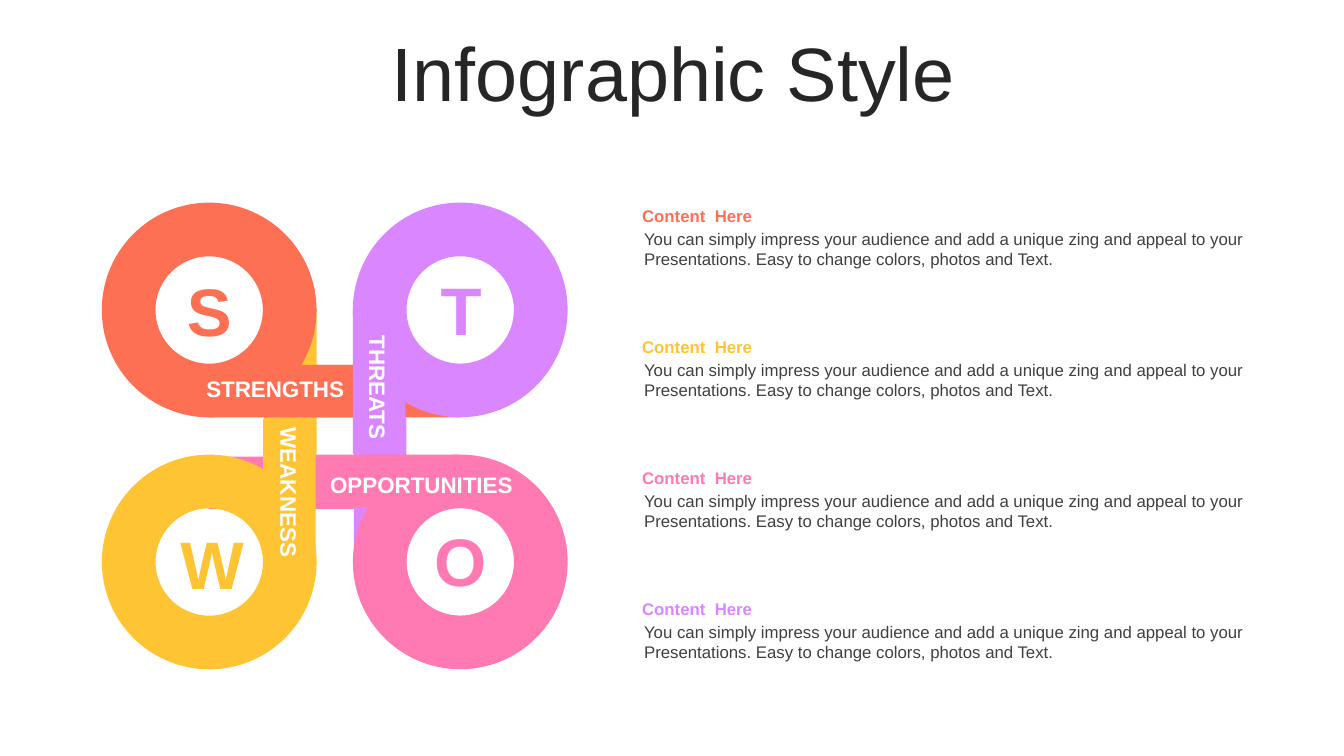
import pptx
import pptx.util
import pptx.dml.color
import pptx.enum.shapes
import pptx.enum.text

Inches = pptx.util.Inches
KIND = pptx.enum.shapes.MSO_SHAPE
ALIGN = pptx.enum.text.PP_ALIGN
ANCHOR = pptx.enum.text.MSO_ANCHOR
COLORS = {
    "coral": "FE7054", "gold": "FEC434", "pink": "FF79B2", "lilac": "DA87FF",
    "title": "262626", "body": "404040", "white": "FFFFFF",
}

deck = pptx.Presentation()
deck.slide_width, deck.slide_height = Inches(13.33), Inches(7.5)
slide = deck.slides.add_slide(deck.slide_layouts[6])


def add_text(box, text, size, color, bold=False, align=ALIGN.CENTER,
             anchor=ANCHOR.MIDDLE, wrap=True, turn=0):
    shape = slide.shapes.add_textbox(*map(Inches, box))
    shape.rotation = turn
    frame = shape.text_frame
    frame.word_wrap = wrap
    frame.vertical_anchor = anchor
    frame.text = text
    para = frame.paragraphs[0]
    para.alignment = align
    font = para.runs[0].font
    font.name, font.size, font.bold = "Arial", pptx.util.Pt(size), bold
    font.color.rgb = pptx.dml.color.RGBColor.from_string(COLORS[color])
    return para


def add_part(kind, box, color, turn):
    shape = slide.shapes.add_shape(kind, *map(Inches, box))
    shape.shadow.inherit = False
    shape.rotation = turn
    shape.fill.solid()
    shape.fill.fore_color.rgb = pptx.dml.color.RGBColor.from_string(COLORS[color])
    shape.line.fill.background()


# Title
title = add_text((0.35, 0.37, 12.66, 0.79), "Infographic Style", 54, "title")
title.line_spacing = 0.9
title.space_before = pptx.util.Pt(10)

# Four content blocks on the right
blurb = ("You can simply impress your audience and add a unique zing and appeal "
         "to your Presentations. Easy to change colors, photos and Text.")
for row, color in enumerate(["coral", "gold", "pink", "lilac"]):
    top = 1.99 + 1.3 * row
    add_text((6.27, top, 6.19, 0.3), "Content  Here", 12, color, True, ALIGN.LEFT)
    add_text((6.29, top + 0.23, 6.17, 0.5), blurb, 12, "body",
             align=ALIGN.LEFT, anchor=ANCHOR.TOP)

# Interlaced rings and bands, back to front
ring, band = 2.13, 0.52
parts = [
    ("band", 2.16, 3.53, "gold", 90),
    ("ring", 1.01, 2.01, "coral", 270),
    ("band", 2.07, 3.62, "coral", 180),
    ("band", 3.13, 3.62, "coral", 180),
    ("ring", 3.5, 2.01, "lilac", 0),
    ("band", 3.04, 3.52, "lilac", 270),
    ("band", 3.05, 4.6, "lilac", 270),
    ("ring", 3.5, 4.51, "pink", 90),
    ("band", 3.12, 4.51, "pink", 0),
    ("band", 2.07, 4.53, "pink", 0),
    ("ring", 1.01, 4.51, "gold", 180),
    ("band", 2.15, 4.61, "gold", 90),
]
for part, left, top, color, turn in parts:
    if part == "ring":
        add_part(KIND.DONUT, (left, top, ring, ring), color, turn)
    else:
        add_part(KIND.RECTANGLE, (left, top, 1.44, band), color, turn)

# Letters inside the rings
for text, left, top, color in [("S", 1.69, 2.62, "coral"), ("W", 1.69, 5.13, "gold"),
                               ("O", 4.18, 5.1, "pink"), ("T", 4.19, 2.61, "lilac")]:
    add_text((left, top, 0.77, 0.91), text, 48, color, True)

# Labels along the bands
labels = [
    ("OPPORTUNITIES", 3.15, 4.62, 2.06, 0),
    ("STRENGTHS", 1.93, 3.67, 1.6, 0),
    ("WEAKNESS", 2.12, 4.7, 1.5, 90),
    ("THREATS", 3.09, 3.66, 1.32, 90),
]
for text, left, top, width, turn in labels:
    add_text((left, top, width, 0.37), text, 16, "white", True, wrap=False, turn=turn)

deck.save("out.pptx")
